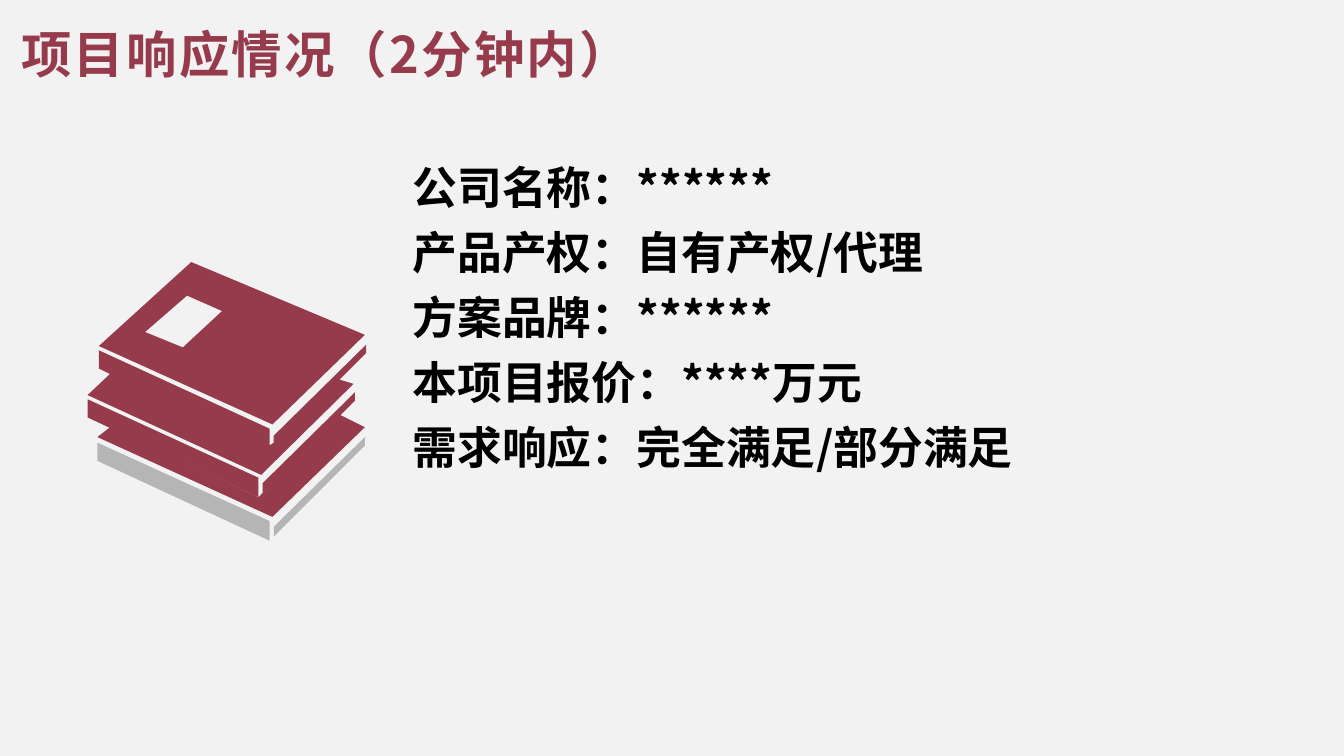
from pptx import Presentation
from pptx.dml.color import RGBColor
from pptx.enum.text import MSO_ANCHOR as Anchor
from pptx.oxml.ns import qn
from pptx.util import Pt
from lxml.etree import SubElement

FONT = "Noto Sans CJK SC"
WINE = RGBColor(0x95, 0x3B, 0x4C)
GREY = RGBColor(0xB5, 0xB5, 0xB6)
BLACK = RGBColor(0x00, 0x00, 0x00)
PALE = RGBColor(0xF2, 0xF2, 0xF2)

TITLE = "项目响应情况（2分钟内）"
DETAILS = [
    "公司名称：******",
    "产品产权：自有产权/代理",
    "方案品牌：******",
    "本项目报价：****万元",
    "需求响应：完全满足/部分满足",
]

# Each book part: colour and outlines, in points from the corner of the stack
BOOK_PARTS = [
    # Bottom book: front and side
    (GREY, [[(7.2, 141.8), (130.3, 198.7), (130.3, 185), (7.2, 128.9)]]),
    (GREY, [[(133.2, 195.8), (198, 131), (198, 124.6), (133.2, 189.4)]]),
    # Middle book: front, then its cover with the sides of the top book
    (WINE, [[(0, 97.9), (0, 110.9), (121.7, 167.8), (121.7, 154.1)]]),
    (WINE, [[(123.8, 151.9), (190.1, 87.1), (180, 83.5), (198.7, 64.8),
             (198.7, 59), (133.2, 123.8), (133.2, 128.9), (130.3, 131),
             (130.3, 118.8), (7.9, 62.6), (7.9, 75.6), (15.8, 79.9), (0, 95)]]),
    # Top book: cover with a label cut out
    (WINE, [[(198, 51.8), (74.2, 0), (7.9, 59.8), (131.8, 115.9)],
            [(68.4, 61.2), (41, 49.7), (70.6, 24.5), (95.8, 34.6)]]),
    # Middle book: side
    (WINE, [[(124.6, 164.9), (190.8, 98.6), (190.8, 92.9), (124.6, 158.4)]]),
    # Bottom book: cover
    (WINE, [[(180, 109.4), (124.6, 164.9), (121.7, 167.8), (15.8, 118.1),
             (7.2, 125.3), (131.8, 182.2), (198, 118.1)]]),
]


def add_text(slide, box, lines, size, color, anchor=Anchor.TOP, tracking=0):
    frame = slide.shapes.add_textbox(*map(Pt, box)).text_frame
    frame.word_wrap = True
    frame.vertical_anchor = anchor
    frame.margin_left = frame.margin_right = Pt(5)
    frame.margin_top = frame.margin_bottom = Pt(2.5)
    for index, line in enumerate(lines):
        paragraph = frame.paragraphs[0] if index == 0 else frame.add_paragraph()
        paragraph.space_after = Pt(8)
        run = paragraph.add_run()
        run.text = line
        run.font.size = Pt(size)
        run.font.bold = True
        run.font.color.rgb = color
        run.font.name = FONT
        properties = run.font._element
        SubElement(properties, qn("a:ea")).set("typeface", FONT)
        if tracking:
            properties.set("spc", str(round(tracking * 100)))


def add_title(slide, box):
    add_text(slide, box, [TITLE], 36, WINE, anchor=Anchor.MIDDLE, tracking=1.6)


def add_details(slide, box):
    add_text(slide, box, DETAILS, 32, BLACK)


def add_book_stack(slide, left, top):
    group = slide.shapes.add_group_shape()
    for color, outlines in BOOK_PARTS:
        first, *others = outlines
        builder = group.shapes.build_freeform(*first[0], scale=Pt(1))
        builder.add_line_segments(first[1:], close=True)
        for outline in others:
            builder.move_to(*outline[0])
            builder.add_line_segments(outline[1:], close=True)
        shape = builder.convert_to_shape(Pt(left), Pt(top))
        shape.shadow.inherit = False
        shape.fill.solid()
        shape.fill.fore_color.rgb = color
        shape.line.fill.background()


def main():
    presentation = Presentation()
    presentation.slide_width = Pt(960)
    presentation.slide_height = Pt(540)
    slide = presentation.slides.add_slide(presentation.slide_layouts[6])
    slide.background.fill.solid()
    slide.background.fill.fore_color.rgb = PALE

    add_title(slide, (10.3, 2.2, 468, 72))
    add_book_stack(slide, 62.6, 187.2)
    add_details(slide, (289.6, 111.6, 589.7, 384.5))
    presentation.save("out.pptx")


if __name__ == "__main__":
    main()
